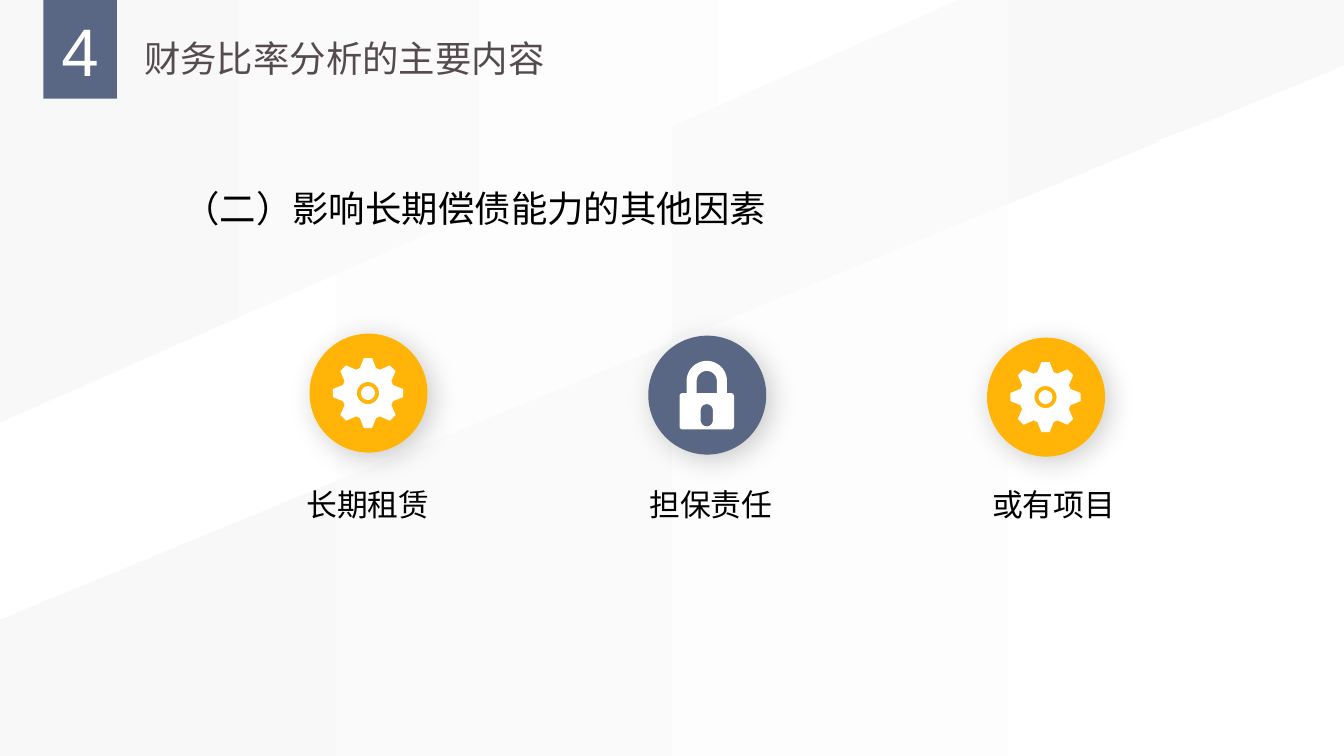
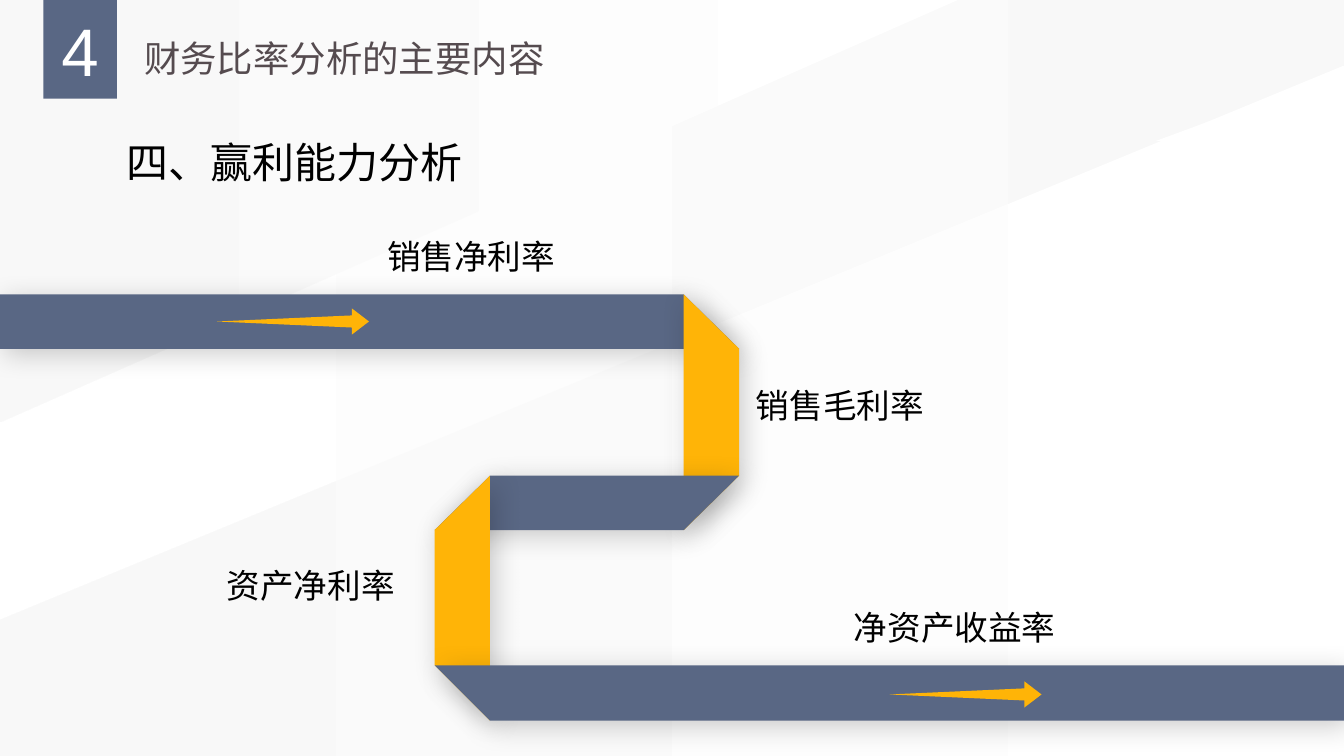
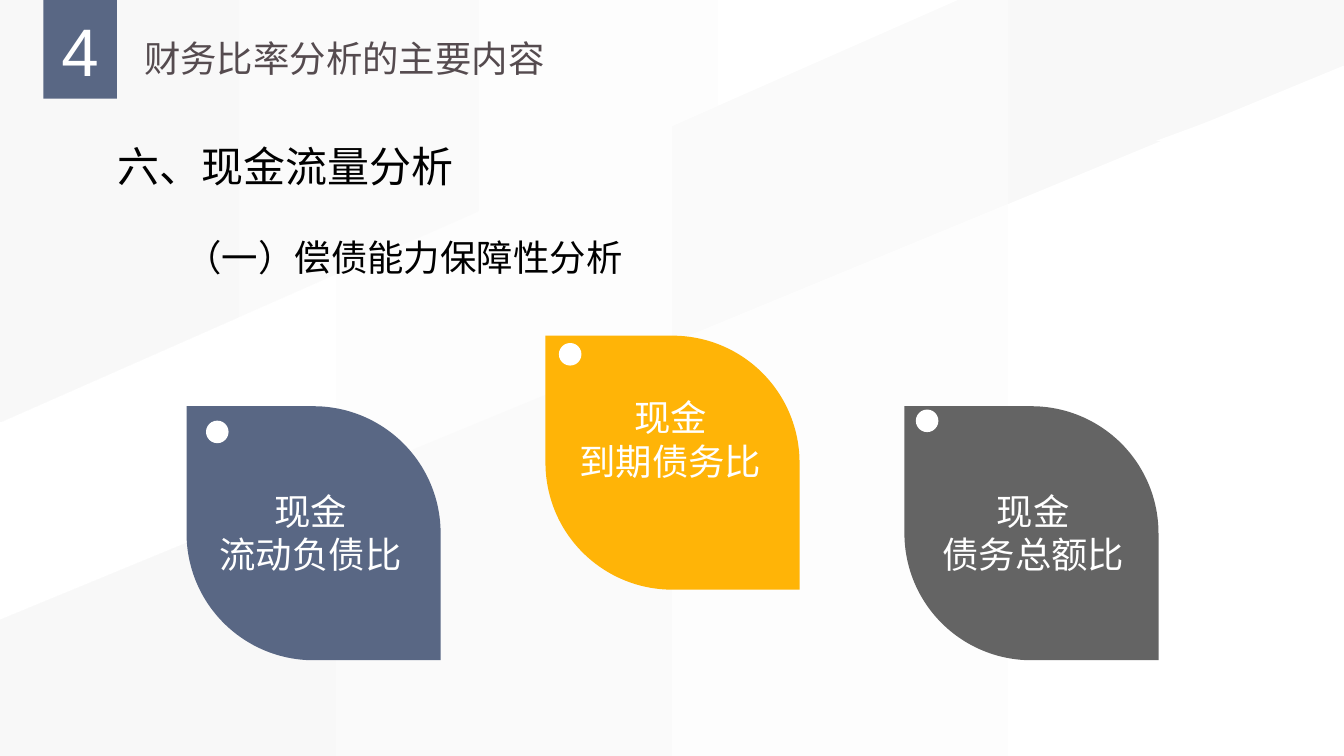
from math import cos, radians, sin

from lxml.etree import SubElement
from pptx import Presentation
from pptx.dml.color import RGBColor
from pptx.enum.shapes import MSO_SHAPE as Preset
from pptx.enum.text import MSO_AUTO_SIZE as AutoSize, PP_ALIGN as Align
from pptx.oxml.ns import qn
from pptx.util import Inches, Pt

NAVY = RGBColor(0x59, 0x67, 0x84)
AMBER = RGBColor(0xFF, 0xB4, 0x07)
GRAY = RGBColor(0x64, 0x64, 0x64)
TITLE_BROWN = RGBColor(0x55, 0x4B, 0x4F)
PALE = RGBColor(0xF8, 0xF8, 0xF8)
WHITE = RGBColor(0xFF, 0xFF, 0xFF)
BLACK = RGBColor(0, 0, 0)
CHINESE_FONT = "Noto Sans CJK SC"
WIDTH, HEIGHT = 13.33, 7.5


def add_text(page, text, left, top, width, height, size, color=BLACK, font=CHINESE_FONT,
             align=None, wrap=True, inset=None, indent=None, space_after=None, line_spacing=None):
    box = page.shapes.add_textbox(Inches(left), Inches(top), Inches(width), Inches(height))
    frame = box.text_frame
    frame.word_wrap = wrap
    frame.auto_size = AutoSize.SHAPE_TO_FIT_TEXT
    if inset is not None:
        frame.margin_left = frame.margin_right = Inches(inset)
        frame.margin_top = frame.margin_bottom = Inches(inset)
    for index, line in enumerate(text.split("\n")):
        para = frame.add_paragraph() if index else frame.paragraphs[0]
        para.alignment = align
        para.line_spacing = line_spacing
        if space_after is not None:
            para.space_after = Pt(space_after)
        if indent is not None:
            para._p.get_or_add_pPr().set("indent", str(Inches(indent)))
        span = para.add_run()
        span.text = line
        span.font.size = Pt(size)
        span.font.color.rgb = color
        span.font.name = font
        SubElement(span.font._element, qn("a:ea"), typeface=font)
    return box


def paint(shape, fill, shadow=False):
    if isinstance(fill, RGBColor):
        shape.fill.solid()
        shape.fill.fore_color.rgb = fill
    else:
        shape.fill.gradient()
        shape.fill.gradient_angle = 180
        for stop, color in zip(shape.fill.gradient_stops, fill):
            stop.color.rgb = color
    shape.line.fill.background()
    shape.shadow.inherit = False
    if shadow:
        effects = shape.element.spPr.find(qn("a:effectLst"))
        outer = SubElement(effects, qn("a:outerShdw"), blurRad=str(Pt(20)), dist=str(Pt(5)),
                           dir="2700000", algn="tl", rotWithShape="0")
        tint = SubElement(outer, qn("a:srgbClr"), val=str(BLACK))
        SubElement(tint, qn("a:alpha"), val="20000")
    return shape


def add_preset(page, preset, left, top, width, height, fill, shadow=False):
    shape = page.shapes.add_shape(preset, Inches(left), Inches(top), Inches(width), Inches(height))
    return paint(shape, fill, shadow)


def add_outline(page, contours, fill, shadow=False):
    contours = [[(Inches(x), Inches(y)) for x, y in contour] for contour in contours]
    builder = page.shapes.build_freeform(*contours[0][0], scale=1.0)
    for index, contour in enumerate(contours):
        if index:
            builder.move_to(*contour[0])
        builder.add_line_segments(contour[1:], close=True)
    return paint(builder.convert_to_shape(), fill, shadow)


def polar(x, y, radius, degrees):
    return x + radius * cos(radians(degrees)), y + radius * sin(radians(degrees))


def arc(x, y, radius, start, end, steps=24):
    return [polar(x, y, radius, start + (end - start) * step / steps) for step in range(steps + 1)]


def add_gear(page, x, y):
    tooth = [(-18, 0.26), (-6.6, 0.35), (6.6, 0.35), (18, 0.26)]
    rim = [polar(x, y, radius, turn + offset)
           for turn in range(0, 360, 45) for offset, radius in tooth]
    add_outline(page, [rim, arc(x, y, 0.11, 360, 0)], WHITE)
    add_preset(page, Preset.OVAL, x - 0.07, y - 0.07, 0.14, 0.14, WHITE)


def add_lock(page, x, y):
    shoulder, base, bend = y - 0.02, y + 0.34, y - 0.14
    body = [(x - 0.2, shoulder), *arc(x, bend, 0.2, 180, 360), (x + 0.2, shoulder)]
    for corner_x, corner_y, start in [(x + 0.24, shoulder + 0.03, 270), (x + 0.24, base - 0.03, 0),
                                      (x - 0.24, base - 0.03, 90), (x - 0.24, shoulder + 0.03, 180)]:
        body += arc(corner_x, corner_y, 0.03, start, start + 90, 6)
    opening = [(x + 0.1, shoulder), *arc(x, bend, 0.1, 360, 180), (x - 0.1, shoulder)]
    keyhole = arc(x, y + 0.15, 0.06, 360, 180) + arc(x, y + 0.25, 0.06, 180, 0)
    add_outline(page, [body, opening, keyhole], WHITE)


def add_page(deck):
    page = deck.slides.add_slide(deck.slide_layouts[6])
    add_preset(page, Preset.RECTANGLE, 0, 0, WIDTH, HEIGHT, (PALE, WHITE))
    add_outline(page, [[(0, 0), (9.5, 0), (0, 4.19)]], (WHITE, PALE))
    add_outline(page, [[(0, 6.15), (WIDTH, 0.65), (WIDTH, HEIGHT), (0, HEIGHT)]], (WHITE, PALE))
    add_outline(page, [[(11.46, 1.4), (WIDTH, 0.71), (WIDTH, 1.4)]], WHITE)
    add_text(page, "财务比率分析的主要内容", 1.33, 0.18, 4.21, 0.62, 26, TITLE_BROWN,
             wrap=False, line_spacing=1.3)
    add_preset(page, Preset.RECTANGLE, 0.43, 0, 0.73, 0.98, NAVY)
    add_text(page, "4", 0.43, 0.09, 0.73, 0.81, 48, WHITE, "Arial", Align.CENTER, inset=0)
    return page


def add_heading(page, text, left, top):
    add_text(page, text, left, top, 3.68, 0.61, 30, align=Align.JUSTIFY, space_after=6)


def add_subheading(page, text, left, top, width):
    add_text(page, text, left, top, width, 0.54, 26, align=Align.JUSTIFY, indent=0.67, space_after=6)


def add_leaf(page, text, left, top, color, text_left, text_top, dot_left, dot_top):
    leaf = add_preset(page, Preset.ROUND_2_DIAG_RECTANGLE, left, top, 2.52, 2.52, color)
    leaf.adjustments[0] = 0
    leaf.adjustments[1] = 0.5
    dot = add_preset(page, Preset.OVAL, dot_left, dot_top, 0.21, 0.21, WHITE)
    dot.line.color.rgb = WHITE
    dot.line.width = Pt(1)
    add_text(page, text, text_left, text_top, 2.08, 0.98, 26, WHITE, align=Align.CENTER)


def add_taper_arrow(page, left, middle):
    outline = [(0, 0), (1.34, -0.06), (1.34, -0.13), (1.51, 0), (1.34, 0.13), (1.34, 0.06)]
    add_outline(page, [[(left + x, middle + y) for x, y in outline]], AMBER)


def build_debt_factors(deck):
    page = add_page(deck)
    add_subheading(page, "（二）影响长期偿债能力的其他因素", 1.05, 1.8, 6.8)
    factors = [("长期租赁", AMBER, add_gear), ("担保责任", NAVY, add_lock), ("或有项目", AMBER, add_gear)]
    for index, (label, color, add_icon) in enumerate(factors):
        left, top = 3.07 + 3.36 * index, 3.31 + 0.02 * index
        add_preset(page, Preset.OVAL, left, top, 1.17, 1.18, color, shadow=True)
        add_icon(page, left + 0.58, top + 0.59)
        add_text(page, label, 2.85 + 3.4 * index, 4.77, 1.6, 0.47, 22, align=Align.CENTER)


def build_profitability(deck):
    page = add_page(deck)
    left, left_inner, right_inner, right = 4.31, 4.86, 6.78, 7.33
    ribbon = [
        (NAVY, [(0, 2.92), (right_inner, 2.92), (right, 3.46), (0, 3.46)]),
        (AMBER, [(right_inner, 2.92), (right, 3.46), (right, 4.72), (right_inner, 5.26)]),
        (NAVY, [(left_inner, 4.72), (right, 4.72), (right_inner, 5.26), (left, 5.26)]),
        (AMBER, [(left_inner, 4.72), (left_inner, 7.15), (left, 6.6), (left, 5.26)]),
        (NAVY, [(left, 6.6), (WIDTH, 6.6), (WIDTH, 7.15), (left_inner, 7.15)]),
    ]
    for color, outline in ribbon:
        add_outline(page, [outline], color, shadow=True)
    add_taper_arrow(page, 2.15, 3.19)
    add_taper_arrow(page, 8.82, 6.89)
    for label, x, y, width in [("销售净利率", 3.74, 2.29, 2.19), ("销售毛利率", 7.4, 3.77, 2.07),
                               ("资产净利率", 2.15, 5.56, 1.95), ("净资产收益率", 8.37, 5.97, 2.22)]:
        add_text(page, label, x, y, width, 0.5, 24)
    add_heading(page, "四、赢利能力分析", 1.16, 1.31)


def build_cash_flow(deck):
    page = add_page(deck)
    add_leaf(page, "现金\n流动负债比", 1.85, 4.03, NAVY, 2.04, 4.8, 2.05, 4.18)
    add_leaf(page, "现金\n到期债务比", 5.41, 3.33, AMBER, 5.61, 3.87, 5.55, 3.41)
    add_leaf(page, "现金\n债务总额比", 8.97, 4.03, GRAY, 9.21, 4.8, 9.09, 4.07)
    add_subheading(page, "（一）偿债能力保障性分析", 1.07, 2.28, 5.22)
    add_heading(page, "六、现金流量分析", 1.07, 1.34)


def main():
    deck = Presentation()
    deck.slide_width, deck.slide_height = Inches(WIDTH), Inches(HEIGHT)
    build_debt_factors(deck)
    build_profitability(deck)
    build_cash_flow(deck)
    deck.save("out.pptx")


if __name__ == "__main__":
    main()
